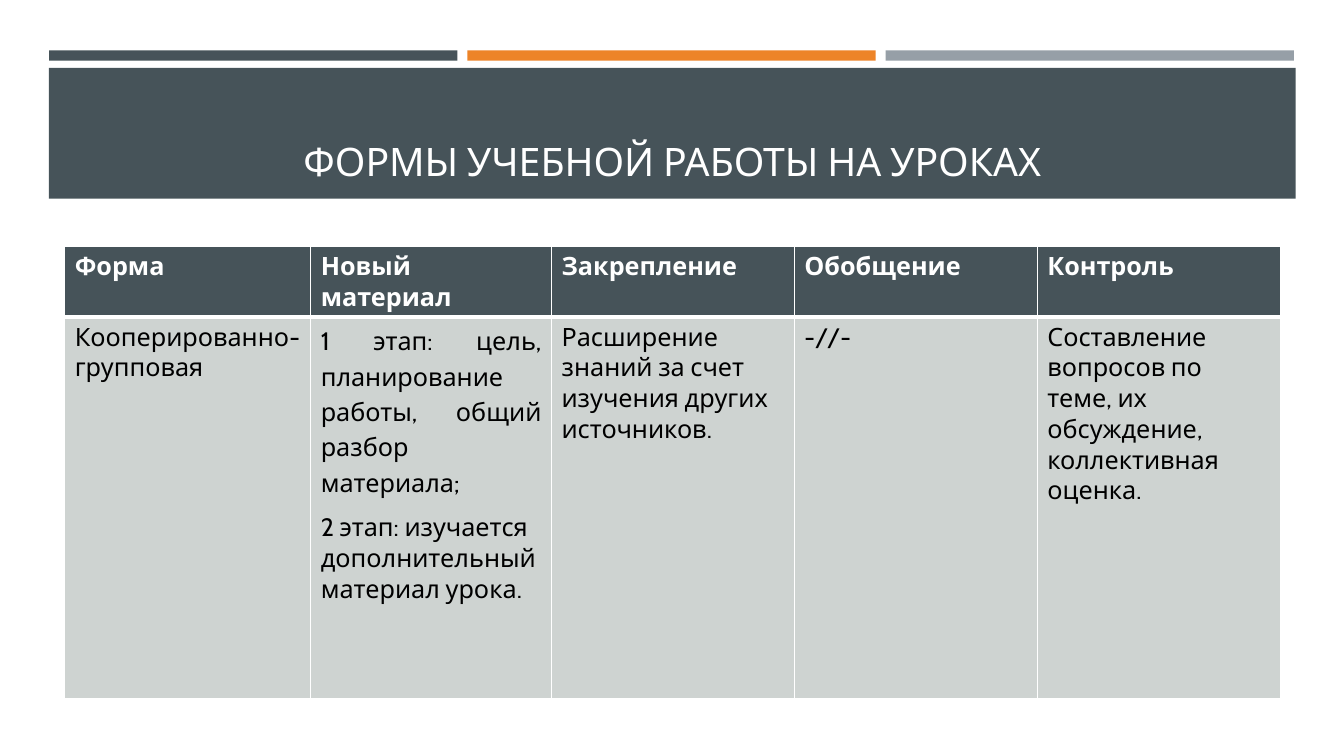
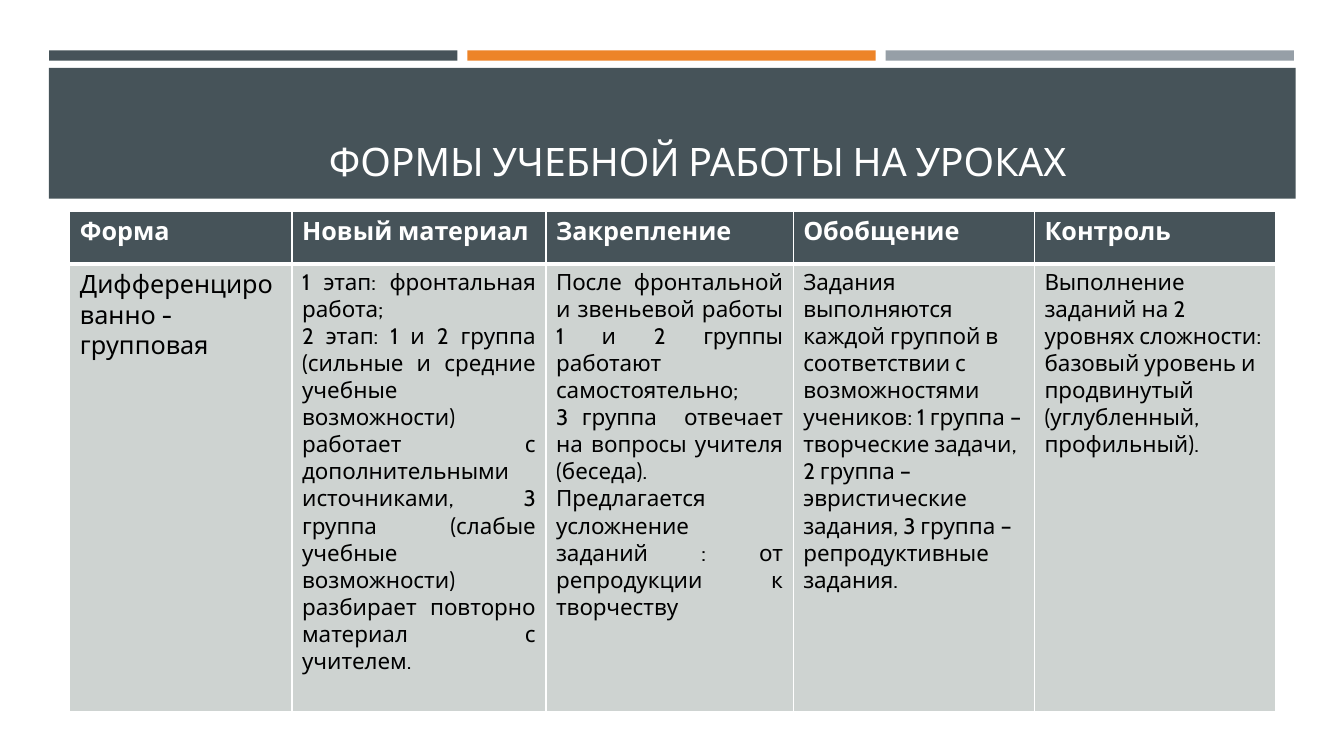
from lxml import etree
from pptx import Presentation
from pptx import util as u
from pptx.dml.color import RGBColor
from pptx.enum import shapes, text
from pptx.oxml import ns

SLATE = RGBColor(0x46, 0x53, 0x59)
ORANGE = RGBColor(0xED, 0x84, 0x28)
GREY = RGBColor(0x96, 0x9F, 0xA7)
PALE = RGBColor(0xCE, 0xD3, 0xD1)
WHITE = RGBColor(0xFF, 0xFF, 0xFF)
BLACK = RGBColor(0, 0, 0)
FONT = "Cabin"
JUSTIFY = text.PP_ALIGN.JUSTIFY

TITLE = "ФОРМЫ УЧЕБНОЙ РАБОТЫ НА УРОКАХ"
HEADINGS = ["Форма", "Новый материал", "Закрепление", "Обобщение", "Контроль"]

COOPERATIVE = [
    [("Кооперированно-групповая", {})],
    [("1 этап: цель, планирование работы, общий разбор материала;",
      {"align": JUSTIFY, "spacing": 1.15, "after": 10}),
     ("2 этап: изучается дополнительный материал урока.", {})],
    [("Расширение знаний за счет изучения других источников.", {})],
    [("-//-", {})],
    [("Составление вопросов по теме, их обсуждение, коллективная оценка.", {})],
]

SMALL = {"size": 16}
SMALL_JUSTIFIED = {"size": 16, "align": JUSTIFY}
DIFFERENTIATED = [
    [("Дифференцированно - групповая", {})],
    [("1 этап: фронтальная работа;", SMALL_JUSTIFIED),
     ("2 этап: 1 и 2 группа (сильные и средние учебные возможности) работает "
      "с дополнительными источниками, 3 группа (слабые учебные возможности) "
      "разбирает повторно материал с учителем.", SMALL_JUSTIFIED)],
    [("После фронтальной и звеньевой работы 1 и 2 группы работают "
      "самостоятельно;", SMALL_JUSTIFIED),
     ("3 группа  отвечает на вопросы учителя (беседа). Предлагается "
      "усложнение заданий : от репродукции к творчеству", SMALL_JUSTIFIED)],
    [("Задания выполняются каждой группой в соответствии с возможностями "
      "учеников: 1 группа – творческие задачи, 2 группа – эвристические "
      "задания, 3 группа – репродуктивные задания.", SMALL)],
    [("Выполнение заданий на 2 уровнях сложности: базовый уровень и "
      "продвинутый (углубленный, профильный).", SMALL)],
]


def write_para(para, words, size=18, color=BLACK, bold=False, align=None,
               spacing=None, after=None):
    para.alignment = align
    if spacing is not None:
        para.line_spacing = spacing
    if after is not None:
        para.space_after = u.Pt(after)
    span = para.add_run()
    span.text = words
    span.font.name = FONT
    span.font.size = u.Pt(size)
    span.font.bold = bold
    span.font.color.rgb = color


def add_band(page, left, top, width, height, color):
    band = page.shapes.add_shape(shapes.MSO_SHAPE.RECTANGLE, u.Cm(left),
                                 u.Cm(top), u.Cm(width), u.Cm(height))
    band.shadow.inherit = False
    band.fill.solid()
    band.fill.fore_color.rgb = color
    band.line.fill.background()


def add_heading(page, shift):
    for index, color in enumerate([SLATE, ORANGE, GREY]):
        add_band(page, 1.24 + index * 10.54, 1.27, 10.29, 0.26, color)
    add_band(page, 1.23, 1.71, 31.42, 3.3, SLATE)
    box = page.shapes.add_textbox(u.Cm(1.63 + shift), u.Cm(1.96),
                                  u.Cm(30.63), u.Cm(2.82))
    frame = box.text_frame
    frame.word_wrap = True
    frame.vertical_anchor = text.MSO_ANCHOR.BOTTOM
    write_para(frame.paragraphs[0], TITLE, size=28, color=WHITE,
               align=text.PP_ALIGN.CENTER)


def set_borders(cell, top, bottom):
    properties = cell._tc.get_or_add_tcPr()
    for side, points in (("L", 1), ("R", 1), ("T", top), ("B", bottom)):
        line = etree.SubElement(properties, ns.qn(f"a:ln{side}"),
                                w=str(u.Pt(points)))
        fill = etree.SubElement(line, ns.qn("a:solidFill"))
        etree.SubElement(fill, ns.qn("a:srgbClr"), val=str(WHITE))


def fill_cell(cell, paragraphs, color, top, bottom):
    set_borders(cell, top, bottom)
    cell.fill.solid()
    cell.fill.fore_color.rgb = color
    frame = cell.text_frame
    for index, (words, style) in enumerate(paragraphs):
        para = frame.add_paragraph() if index else frame.paragraphs[0]
        write_para(para, words, **style)


def add_forms_table(page, left, top, widths, heights, body):
    table = page.shapes.add_table(len(heights), len(widths), u.Cm(left),
                                  u.Cm(top), u.Cm(sum(widths)),
                                  u.Cm(sum(heights))).table
    table.horz_banding = False
    for column, width in zip(table.columns, widths):
        column.width = u.Cm(width)
    for row, height in zip(table.rows, heights):
        row.height = u.Cm(height)
    for index, (heading, paragraphs) in enumerate(zip(HEADINGS, body)):
        header = [(heading, {"color": WHITE, "bold": True})]
        fill_cell(table.cell(0, index), header, SLATE, 1, 3)
        fill_cell(table.cell(1, index), paragraphs, PALE, 3, 1)


def add_page(deck, shift, **table):
    page = deck.slides.add_slide(deck.slide_layouts[6])
    add_heading(page, shift)
    add_forms_table(page, **table)


def main():
    deck = Presentation()
    deck.slide_width = u.Cm(33.87)
    deck.slide_height = u.Cm(19.05)
    add_page(deck, 0, left=1.63, top=6.2, widths=[6.2, 6.07, 6.12, 6.12, 6.12],
             heights=[1.55, 9.63], body=COOPERATIVE)
    add_page(deck, 0.64, left=1.76, top=5.33,
             widths=[5.6, 6.4, 6.23, 6.08, 6.08], heights=[1.32, 11.28],
             body=DIFFERENTIATED)
    deck.save("out.pptx")


if __name__ == "__main__":
    main()
